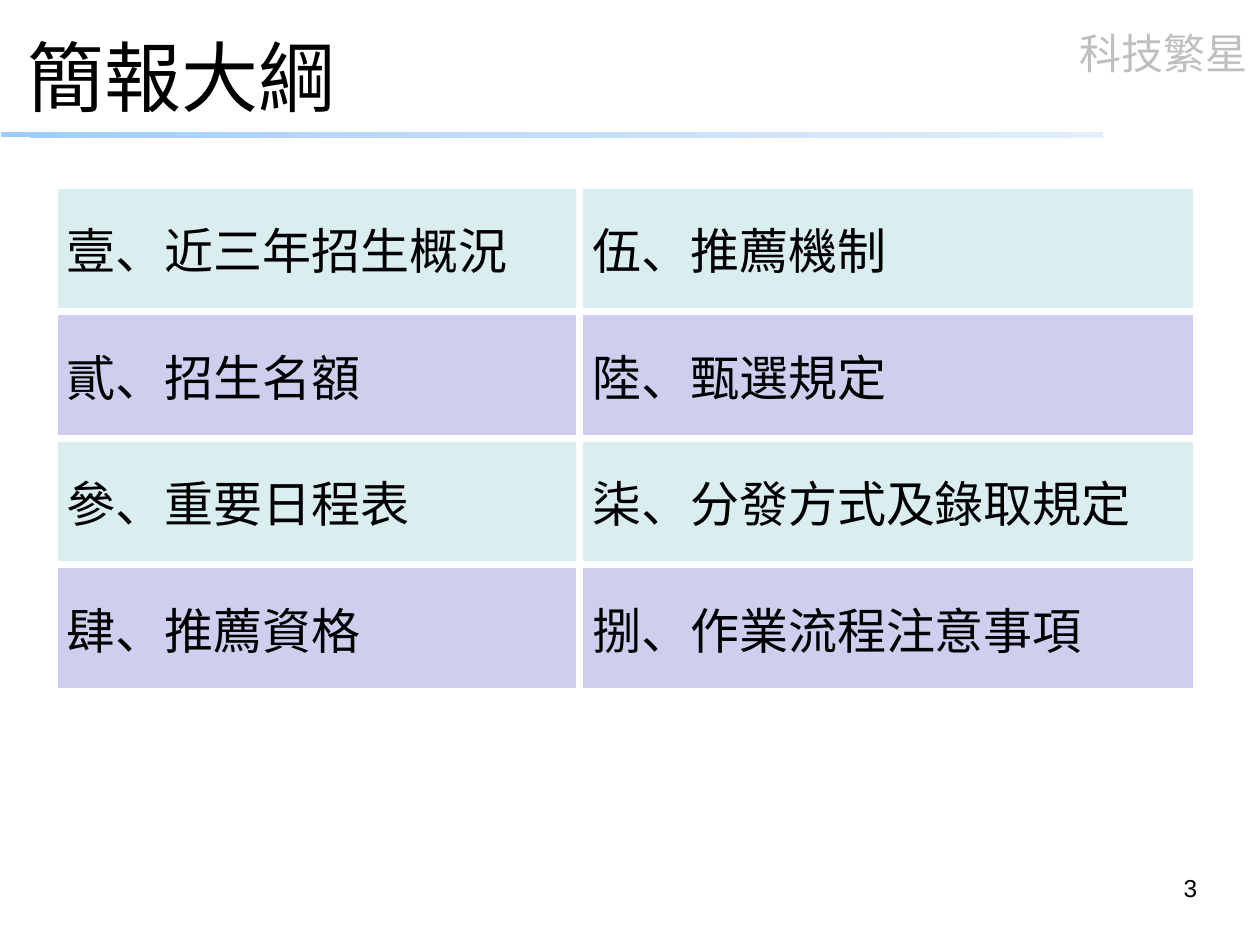
from copy import deepcopy

from lxml import etree
from pptx import Presentation
from pptx.dml.color import RGBColor
from pptx.enum import shapes, text
from pptx.oxml.ns import qn
from pptx.util import Pt

BLACK = RGBColor(0x00, 0x00, 0x00)
GRAY = RGBColor(0xBF, 0xBF, 0xBF)
WHITE = RGBColor(0xFF, 0xFF, 0xFF)
BAND_COLORS = (RGBColor(0xDA, 0xED, 0xEF), RGBColor(0xCE, 0xCE, 0xEF))
RULE_COLORS = (
    RGBColor(0x9F, 0xCC, 0xF6),
    RGBColor(0xC4, 0xDE, 0xF8),
    RGBColor(0xE2, 0xEE, 0xFB),
)
HEADING_FONT = "Noto Sans CJK JP"
TABLE_FONT = "Noto Sans CJK SC"
OUTLINE = (
    ("壹、近三年招生概況", "伍、推薦機制"),
    ("貳、招生名額", "陸、甄選規定"),
    ("參、重要日程表", "柒、分發方式及錄取規定"),
    ("肆、推薦資格", "捌、作業流程注意事項"),
)


def write_text(frame, content, size, font, color=BLACK,
               align=text.PP_ALIGN.LEFT, anchor=text.MSO_ANCHOR.TOP):
    frame.word_wrap = True
    frame.vertical_anchor = anchor
    paragraph = frame.paragraphs[0]
    paragraph.alignment = align
    run = paragraph.add_run()
    run.text = content
    run.font.size = Pt(size)
    run.font.bold = False
    run.font.color.rgb = color
    run.font.name = font
    east_asian = etree.SubElement(run.font._element, qn("a:ea"))
    east_asian.set("typeface", font)


def add_label(slide, box, content, **text_format):
    shape = slide.shapes.add_textbox(*map(Pt, box))
    write_text(shape.text_frame, content, **text_format)


def add_title(slide, box, content):
    title = slide.shapes.title
    title.left, title.top, title.width, title.height = map(Pt, box)
    title.text_frame.auto_size = text.MSO_AUTO_SIZE.NONE
    write_text(title.text_frame, content, size=44, font=HEADING_FONT,
               anchor=text.MSO_ANCHOR.MIDDLE)


def add_rule(slide, box):
    rule = slide.shapes.add_shape(shapes.MSO_SHAPE.RECTANGLE, *map(Pt, box))
    rule.shadow.inherit = False
    rule.line.fill.background()
    rule.fill.gradient()
    rule.fill.gradient_angle = 45
    stop_list = rule._element.spPr.find(".//" + qn("a:gsLst"))
    stop_list.append(deepcopy(stop_list[0]))
    for index, stop in enumerate(rule.fill.gradient_stops):
        stop.color.rgb = RULE_COLORS[index]
        stop.position = index / 2


def set_borders(cell, color, width):
    properties = cell._tc.get_or_add_tcPr()
    for index, side in enumerate(("a:lnL", "a:lnR", "a:lnT", "a:lnB")):
        line = etree.Element(qn(side), w=str(Pt(width)))
        fill = etree.SubElement(line, qn("a:solidFill"))
        etree.SubElement(fill, qn("a:srgbClr"), val=str(color))
        properties.insert(index, line)


def add_outline_table(slide, box, rows, column_shares):
    left, top, width, height = box
    frame = slide.shapes.add_table(len(rows), len(column_shares), *map(Pt, box))
    table = frame.table
    for column, share in zip(table.columns, column_shares):
        column.width = Pt(width * share)
    for row_index, entries in enumerate(rows):
        table.rows[row_index].height = Pt(height / len(rows))
        for column_index, entry in enumerate(entries):
            cell = table.cell(row_index, column_index)
            cell.fill.solid()
            cell.fill.fore_color.rgb = BAND_COLORS[row_index % 2]
            cell.vertical_anchor = text.MSO_ANCHOR.MIDDLE
            set_borders(cell, WHITE, 4.5)
            write_text(cell.text_frame, entry, size=28, font=TABLE_FONT,
                       anchor=text.MSO_ANCHOR.MIDDLE)


def build_outline_slide(presentation):
    slide = presentation.slides.add_slide(presentation.slide_layouts[5])
    add_rule(slide, (0.7, 75.6, 629.3, 3))
    add_label(slide, (592.5, 12.2, 127.5, 36), "科技繁星", size=24,
              font=HEADING_FONT, color=GRAY, align=text.PP_ALIGN.RIGHT)
    add_label(slide, (523.4, 495.4, 167.8, 37.4), "3", size=14,
              font="Arial", align=text.PP_ALIGN.RIGHT)
    add_title(slide, (8.6, 9.4, 635, 67.7), "簡報大綱")
    add_outline_table(slide, (31, 105.8, 653, 289.4), OUTLINE, (0.46, 0.54))


def main():
    presentation = Presentation()
    presentation.slide_width = Pt(720)
    presentation.slide_height = Pt(540)
    build_outline_slide(presentation)
    presentation.save("out.pptx")


if __name__ == "__main__":
    main()
